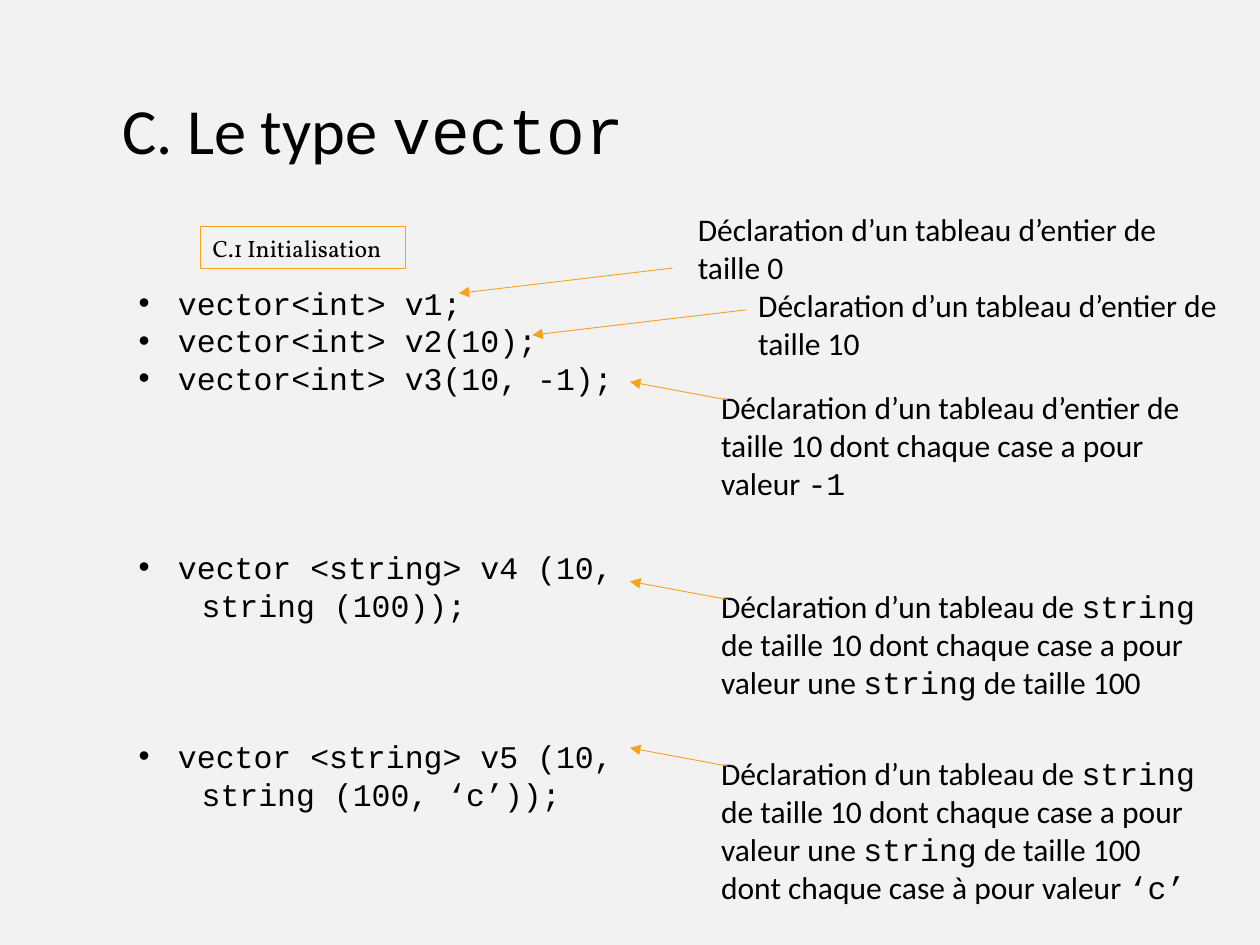
from lxml.etree import SubElement
from pptx import Presentation
from pptx.dml.color import RGBColor
from pptx.enum.shapes import MSO_CONNECTOR, MSO_SHAPE
from pptx.enum.text import MSO_ANCHOR, MSO_AUTO_SIZE, PP_ALIGN
from pptx.oxml.ns import qn
from pptx.util import Pt


def tint(code):
    return RGBColor.from_string(code)


class Deck:
    ink, gold, paper = "000000", "F6A21D", "F2F2F2"
    sans, mono, serif = "Calibri", "Courier New", "Vollkorn"
    size, pitch = 18, 21.6

    def __init__(self, wide, high):
        self.prs = Presentation()
        self.prs.slide_width, self.prs.slide_height = Pt(wide), Pt(high)
        self.slide = self.prs.slides.add_slide(self.prs.slide_layouts[1])
        fill = self.slide.background.fill
        fill.solid()
        fill.fore_color.rgb = tint(self.paper)

    def place(self, shape, box):
        shape.left, shape.top, shape.width, shape.height = map(Pt, box)
        shape.text_frame.auto_size = MSO_AUTO_SIZE.NONE
        return shape.text_frame

    def style(self, para, face, size):
        para.alignment = PP_ALIGN.LEFT
        para.font.name, para.font.size = face, Pt(size)
        para.font.color.rgb = tint(self.ink)

    def mixed(self, para, text, size):
        """Write text in which backticks enclose code."""
        self.style(para, self.sans, size)
        for i, part in enumerate(text.split("`")):
            if part:
                run = para.add_run()
                run.text = part
                if i % 2:
                    run.font.name = self.mono

    def title(self, box, text):
        frame = self.place(self.slide.shapes.title, box)
        frame.vertical_anchor = MSO_ANCHOR.MIDDLE
        self.mixed(frame.paragraphs[0], text, 36.8)

    def code(self, box, items):
        frame = self.place(self.slide.placeholders[1], box)
        for i, (text, gap) in enumerate(items):
            para = frame.add_paragraph() if i else frame.paragraphs[0]
            para.text = text
            self.style(para, self.mono, self.size)
            para.line_spacing = Pt(self.pitch)
            para.space_before = Pt(gap * self.pitch)
            props = para._p.get_or_add_pPr()
            props.set("marL", str(Pt(22.5)))
            props.set("indent", str(Pt(-22.5)))

    def label(self, box, text):
        shape = self.slide.shapes.add_shape(MSO_SHAPE.RECTANGLE, *map(Pt, box))
        shape.shadow.inherit = False
        shape.fill.background()
        shape.line.color.rgb = tint(self.gold)
        shape.line.width = Pt(0.75)
        frame = shape.text_frame
        frame.word_wrap = False
        frame.vertical_anchor = MSO_ANCHOR.MIDDLE
        frame.text = text
        self.style(frame.paragraphs[0], self.serif, 13.5)

    def note(self, left, top, rows, text):
        box = left, top, 288, 7.2 + rows * 22
        frame = self.slide.shapes.add_textbox(*map(Pt, box)).text_frame
        frame.word_wrap = True
        self.mixed(frame.paragraphs[0], text, self.size)

    def arrow(self, start, end):
        link = self.slide.shapes.add_connector(
            MSO_CONNECTOR.STRAIGHT, *map(Pt, start + end))
        link.line.color.rgb = tint(self.gold)
        link.line.width = Pt(0.5)
        SubElement(link.line._get_or_add_ln(), qn("a:tailEnd"), type="triangle")
        SubElement(link._element.spPr, qn("a:effectLst"))


def main():
    deck = Deck(720, 540)
    deck.title((62.6, 46.8, 445.7, 54), "C. Le type `vector`")
    deck.label((114.5, 129.6, 117.4, 23.8), "C.1 Initialisation")

    # Declarations, each with the free lines above it
    deck.code((72, 158.4, 401, 377), [
        ("vector<int> v1;", 0),
        ("vector<int> v2(10);", 0),
        ("vector<int> v3(10, -1);", 0),
        ("vector <string> v4 (10,\v\tstring (100));", 4),
        ("vector <string> v5 (10,\v\tstring (100, ‘c’));", 3),
    ])

    # Notes on the sized vectors, with long flat arrows
    ints = "Déclaration d’un tableau d’entier de taille "
    for left, top, count, start in [
            (391.7, 116.6, "0", (384.2, 153.2)),
            (426.2, 159.8, "10", (426.2, 177.1))]:
        deck.note(left, top, 2, ints + count)
        deck.arrow(start, (start[0] - 122, start[1] + 14.4))

    # Notes on the filled vectors, with short arrows from their corners
    each = "10 dont chaque case a pour valeur "
    texts = ("Déclaration d’un tableau de `string` de taille "
             + each + "une `string` de taille 100")
    for top, rows, text in [
            (218.2, 3, ints + each + "`-1`"),
            (332.2, 3, texts),
            (427.4, 4, texts + " dont chaque case à pour valeur `‘c’`")]:
        deck.note(405, top, rows, text)
        deck.arrow((416, top + 10.4), (360, top))

    deck.prs.save("out.pptx")


if __name__ == "__main__":
    main()
